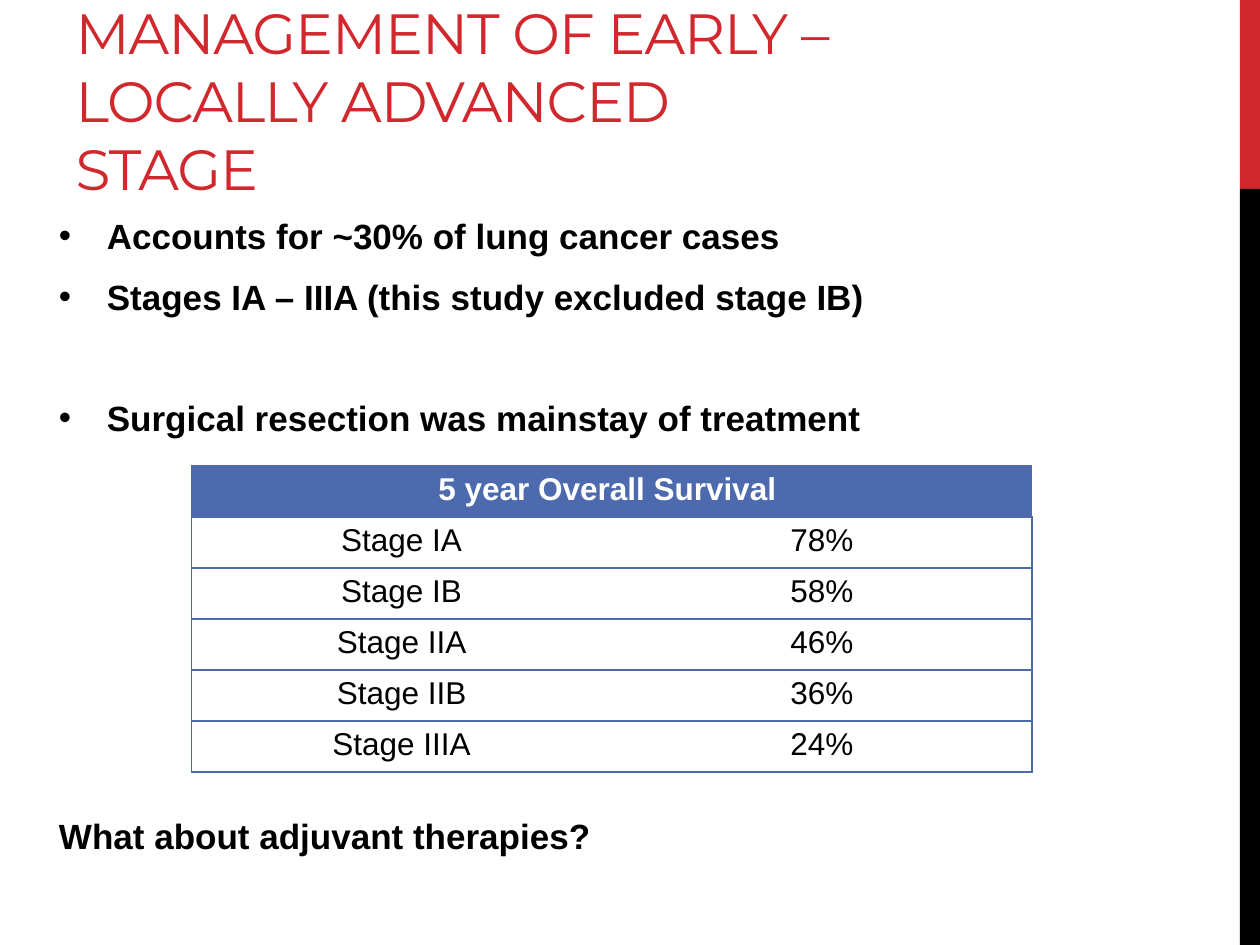
from dataclasses import dataclass

from lxml.etree import SubElement
from pptx import Presentation
from pptx.dml.color import RGBColor as Rgb
from pptx.enum.shapes import MSO_SHAPE as Shape
from pptx.enum.text import MSO_ANCHOR as Anchor, MSO_AUTO_SIZE as AutoSize, PP_ALIGN as Align
from pptx.oxml import parse_xml
from pptx.oxml.ns import nsdecls, qn
from pptx.util import Inches, Pt


@dataclass(frozen=True)
class Theme:
    red: str = "D1282E"
    black: str = "000000"
    white: str = "FFFFFF"
    blue: str = "4E6AAE"
    heading_font: str = "Montserrat"
    body_font: str = "Arial"
    title_size: float = 32.4
    body_size: float = 20
    table_size: float = 18


THEME = Theme()
WIDTH, HEIGHT = Inches(10), Inches(7.5)
LINE_PITCH = 34  # points from one body line to the next
BEFORE, AFTER = 2, 9
TITLE = "MANAGEMENT OF EARLY – LOCALLY ADVANCED STAGE"
# wording, bulleted, empty lines above
POINTS = [
    ("Accounts for ~30% of lung cancer cases", True, 0),
    ("Stages IA – IIIA (this study excluded stage IB)", True, 0),
    ("Surgical resection was mainstay of treatment", True, 1),
    ("What about adjuvant therapies?", False, 6),
]
SURVIVAL = [
    ("Stage IA", "78%"),
    ("Stage IB", "58%"),
    ("Stage IIA", "46%"),
    ("Stage IIB", "36%"),
    ("Stage IIIA", "24%"),
]


def share(left, top, width, height):
    """Turn shares of the slide's size into a box."""
    return int(left * WIDTH), int(top * HEIGHT), int(width * WIDTH), int(height * HEIGHT)


def add_span(para, text, font, size, color, bold=False):
    span = para.add_run()
    span.text = text
    span.font.name, span.font.size, span.font.bold = font, Pt(size), bold
    span.font.color.rgb = Rgb.from_string(color)
    return span


def add_side_band(page, box):
    """Red fifth above a black remainder."""
    left, top, width, height = box
    red_height = height // 5
    for y, tall, color in ((top, red_height, THEME.red),
                           (top + red_height, height - red_height, THEME.black)):
        band = page.shapes.add_shape(Shape.RECTANGLE, left, y, width, tall)
        band.shadow.inherit = False
        band.fill.solid()
        band.fill.fore_color.rgb = Rgb.from_string(color)
        band.line.fill.background()


def add_title(page, box):
    title = page.shapes.title
    title.left, title.top, title.width, title.height = box
    frame = title.text_frame
    frame.word_wrap, frame.auto_size = True, AutoSize.NONE
    frame.vertical_anchor = Anchor.BOTTOM
    para = frame.paragraphs[0]
    para.alignment = Align.LEFT
    span = add_span(para, TITLE, THEME.heading_font, THEME.title_size, THEME.red)
    span._r.get_or_add_rPr().set("spc", "-60")


def add_points(page, box):
    frame = page.shapes.add_textbox(*box).text_frame
    frame.word_wrap = True
    for index, (text, bulleted, gap) in enumerate(POINTS):
        para = frame.add_paragraph() if index else frame.paragraphs[0]
        para.space_before = Pt(BEFORE + gap * LINE_PITCH)
        para.space_after = Pt(AFTER)
        if bulleted:
            props = para._p.get_or_add_pPr()
            props.set("marL", str(Inches(0.38)))
            props.set("indent", str(-Inches(0.38)))
            SubElement(props, qn("a:buFont")).set("typeface", THEME.body_font)
            SubElement(props, qn("a:buChar")).set("char", "•")
        add_span(para, text, THEME.body_font, THEME.body_size, THEME.black, True)


def set_borders(cell, sides):
    """Rule the named sides (L, R, T, B) and clear the others."""
    props = cell._tc.get_or_add_tcPr()
    for index, side in enumerate("LRTB"):
        paint = (f'<a:solidFill><a:srgbClr val="{THEME.blue}"/></a:solidFill>'
                 if side in sides else "<a:noFill/>")
        props.insert(index, parse_xml(
            f'<a:ln{side} {nsdecls("a")} w="{Pt(1)}">{paint}</a:ln{side}>'))


def fill_cell(cell, text, sides, header=False):
    cell.fill.solid()
    cell.fill.fore_color.rgb = Rgb.from_string(THEME.blue if header else THEME.white)
    set_borders(cell, sides)
    para = cell.text_frame.paragraphs[0]
    para.alignment = Align.CENTER
    if text:
        add_span(para, text, THEME.body_font, THEME.table_size,
                 THEME.white if header else THEME.black, header)


def add_survival_table(page, box):
    rows = [("5 year Overall Survival ", "")] + SURVIVAL
    table = page.shapes.add_table(len(rows), 2, *box).table
    for y, row in enumerate(rows):
        for x, text in enumerate(row):
            fill_cell(table.cell(y, x), text, "LTB" if x == 0 else "RTB", header=y == 0)
    table.cell(0, 0).merge(table.cell(0, 1))


def main():
    deck = Presentation()
    deck.slide_width, deck.slide_height = WIDTH, HEIGHT
    page = deck.slides.add_slide(deck.slide_layouts.get_by_name("Title Only"))
    add_side_band(page, share(0.984, 0, 0.016, 1))
    add_title(page, share(0.05, 0.02, 0.63, 0.2))
    add_points(page, share(0.037, 0.22, 0.83, 0.73))
    add_survival_table(page, share(0.152, 0.493, 0.667, 0.324))
    deck.save("out.pptx")


if __name__ == "__main__":
    main()
